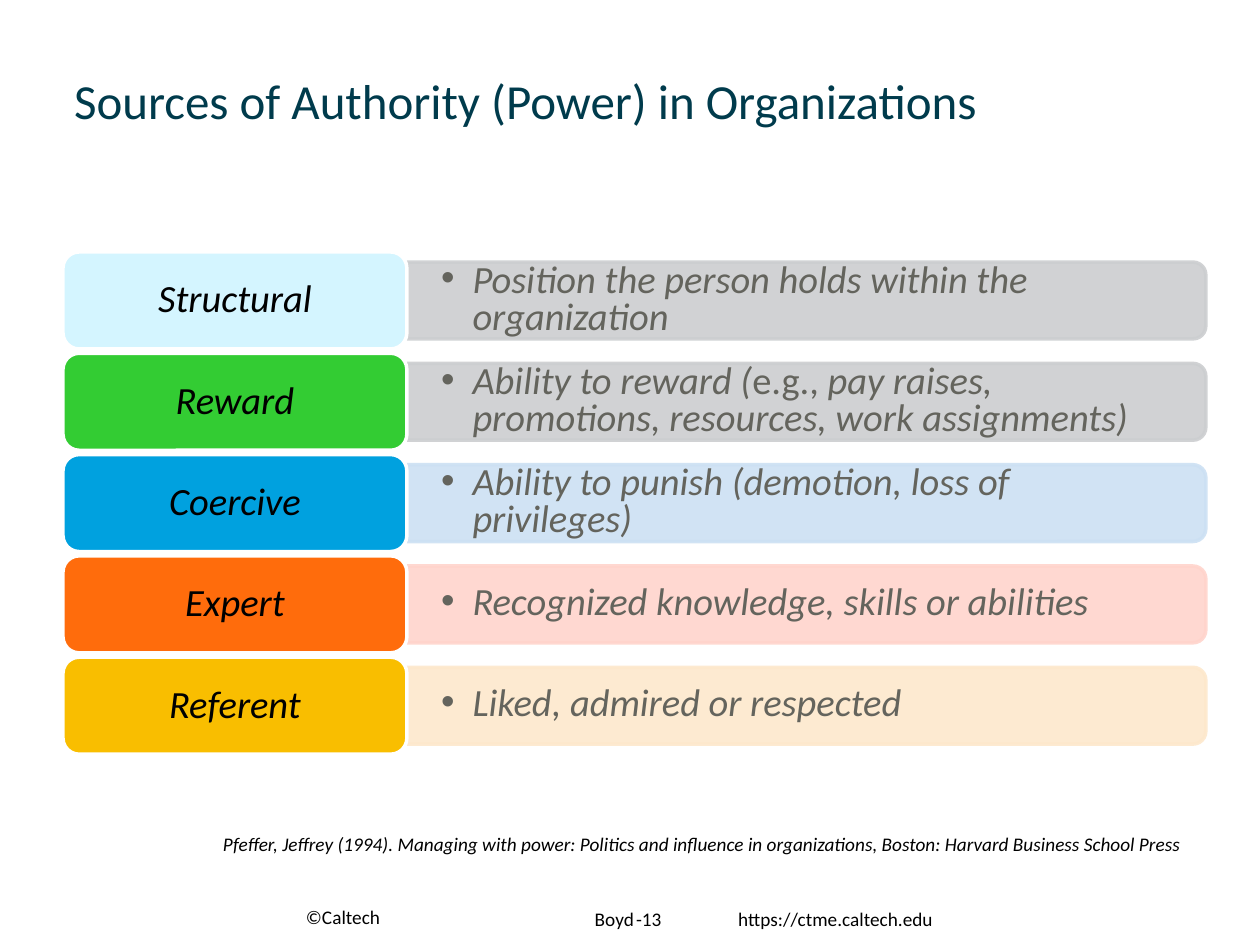
from dataclasses import dataclass, field

import pptx
import pptx.dml.color
import pptx.enum.shapes
import pptx.enum.text
import pptx.oxml.ns
import pptx.util
from lxml import etree

Inches = pptx.util.Inches
Pt = pptx.util.Pt
SHAPE = pptx.enum.shapes.MSO_SHAPE
ALIGN = pptx.enum.text.PP_ALIGN
ANCHOR = pptx.enum.text.MSO_ANCHOR
qn = pptx.oxml.ns.qn

FONT = "Calibri"
TOP, PITCH = 2.0, 0.804
LABEL_LEFT, LABEL_W, LABEL_H = 0.5, 2.73, 0.77
BAR_LEFT, BAR_W, BAR_H = 3.23, 6.34, 0.61
TEXT_W, TEXT_H = 6.31, 0.55
INDENT = 0.25


@dataclass
class Source:
    label: str
    color: str
    bar_color: str
    runs: list[tuple[str, bool]]


@dataclass
class Note:
    text: str
    box: tuple[float, float, float, float]
    size: int = 11
    color: str = "000000"
    italic: bool = False
    anchor: object = ANCHOR.MIDDLE
    align: object = ALIGN.LEFT
    insets: tuple[float, float] = (0.1, 0.05)
    para: dict = field(default_factory=dict)


SOURCES = [
    Source("Structural", "D4F5FF", "CCCED0",
           [("Position the person holds within the organization", True)]),
    Source("Reward", "33CC33", "CCCED0",
           [("Ability to reward (", True), ("e.g., ", False),
            ("pay raises, promotions, resources, work assignments)", True)]),
    Source("Coercive", "00A1DF", "CCE0F3",
           [("Ability to punish (demotion, loss of privileges)", True)]),
    Source("Expert", "FF6C0C", "FFD4CC",
           [("Recognized knowledge, skills or abilities", True)]),
    Source("Referent", "F9BE00", "FDE8CC",
           [("Liked, admired or respected", True)]),
]

NOTES = [
    Note("Sources of Authority (Power) in Organizations", (0.49, 0.56, 9, 0.52),
         size=28, color="003B4C", anchor=ANCHOR.BOTTOM, para={"line_spacing": 0.9}),
    Note("Pfeffer, Jeffrey (1994). Managing with power: Politics and influence in "
         "organizations, Boston: Harvard Business School Press",
         (1.7, 6.57, 7.87, 0.26), italic=True, insets=(0.07, 0.04)),
    Note("©Caltech", (2.33, 7.17, 1.17, 0.25), anchor=ANCHOR.BOTTOM),
    Note("Boyd", (3.8, 7.17, 1.33, 0.25), align=ALIGN.RIGHT),
    Note("-13", (4.95, 7.17, 0.67, 0.25)),
    Note("https://ctme.caltech.edu", (5.76, 7.15, 2.02, 0.29), anchor=ANCHOR.TOP),
]


def rgb(color: str):
    return pptx.dml.color.RGBColor.from_string(color)


def apply(obj, values: dict) -> None:
    for name, value in values.items():
        setattr(obj, name, value)


def set_frame(tf, insets: tuple[float, float], anchor) -> None:
    dx, dy = map(Inches, insets)
    apply(tf, {"word_wrap": True, "vertical_anchor": anchor,
               "margin_left": dx, "margin_right": dx,
               "margin_top": dy, "margin_bottom": dy})


def add_run(p, text: str, size: int, color: str, italic: bool) -> None:
    r = p.add_run()
    r.text = text
    apply(r.font, {"name": FONT, "size": Pt(size), "italic": italic})
    r.font.color.rgb = rgb(color)


def add_block(s, kind, box, fill: str, line: str):
    sp = s.shapes.add_shape(kind, *map(Inches, box))
    sp.shadow.inherit = False
    sp.fill.solid()
    sp.fill.fore_color.rgb = rgb(fill)
    sp.line.color.rgb = rgb(line)
    sp.line.width = Pt(2)
    return sp


def add_bar(s, color: str, mid: float) -> None:
    left = BAR_LEFT + (BAR_W - BAR_H) / 2
    sp = add_block(s, SHAPE.ROUND_2_SAME_RECTANGLE,
                   (left, mid - BAR_W / 2, BAR_H, BAR_W), color, color)
    sp.rotation = 90
    for clr in sp._element.spPr.iter(qn("a:srgbClr")):
        etree.SubElement(clr, qn("a:alpha"), val="90000")


def add_bullet(p) -> None:
    pPr = p._p.get_or_add_pPr()
    pPr.set("marL", str(Inches(INDENT)))
    pPr.set("indent", str(-Inches(INDENT)))
    etree.SubElement(pPr, qn("a:buFont"), typeface="Arial")
    etree.SubElement(pPr, qn("a:buChar"), char="•")


def add_source(s, source: Source, top: float) -> None:
    mid = top + LABEL_H / 2
    add_bar(s, source.bar_color, mid)

    box = (BAR_LEFT, mid - TEXT_H / 2, TEXT_W, TEXT_H)
    tf = s.shapes.add_textbox(*map(Inches, box)).text_frame
    set_frame(tf, (0.27, 0.14), ANCHOR.MIDDLE)
    p = tf.paragraphs[0]
    add_bullet(p)
    p.line_spacing = 0.8
    for text, italic in source.runs:
        add_run(p, text, 22, "64645D", italic)

    sp = add_block(s, SHAPE.ROUNDED_RECTANGLE,
                   (LABEL_LEFT, top, LABEL_W, LABEL_H), source.color, "FFFFFF")
    set_frame(sp.text_frame, (0.09, 0.05), ANCHOR.MIDDLE)
    p = sp.text_frame.paragraphs[0]
    apply(p, {"alignment": ALIGN.CENTER, "line_spacing": 0.9})
    add_run(p, source.label, 22, "000000", True)


def add_note(s, note: Note) -> None:
    tf = s.shapes.add_textbox(*map(Inches, note.box)).text_frame
    set_frame(tf, note.insets, note.anchor)
    p = tf.paragraphs[0]
    apply(p, {"alignment": note.align, **note.para})
    add_run(p, note.text, note.size, note.color, note.italic)


def main() -> None:
    prs = pptx.Presentation()
    apply(prs, {"slide_width": Inches(10), "slide_height": Inches(7.5)})
    s = prs.slides.add_slide(prs.slide_layouts[6])
    for i, source in enumerate(SOURCES):
        add_source(s, source, TOP + i * PITCH)
    for note in NOTES:
        add_note(s, note)
    prs.save("out.pptx")


if __name__ == "__main__":
    main()
